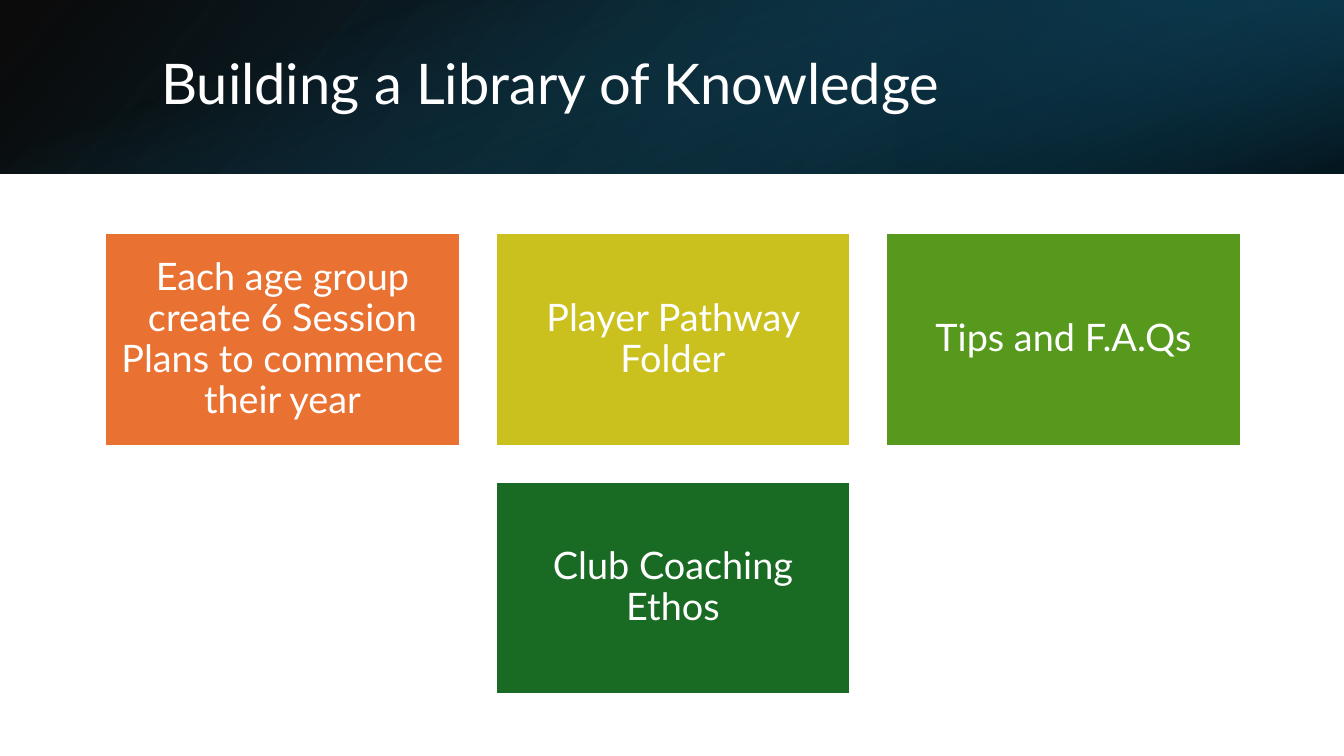
from pptx import Presentation
from pptx.dml.color import RGBColor
from pptx.enum.shapes import MSO_SHAPE
from pptx.enum.text import MSO_ANCHOR, MSO_AUTO_SIZE, PP_ALIGN
from pptx.oxml.ns import qn
from pptx.util import Pt

RECTANGLE = MSO_SHAPE.RECTANGLE
MIDDLE = MSO_ANCHOR.MIDDLE
NO_AUTOFIT = MSO_AUTO_SIZE.NONE
LEFT, CENTER = PP_ALIGN.LEFT, PP_ALIGN.CENTER

SLIDE_WIDTH, SLIDE_HEIGHT = 960, 540
BANNER_HEIGHT = 124
FONT = "Lato"
WHITE = "FFFFFF"
TITLE_ONLY = 5

CARD_ROWS = [
    [
        ("Each age group create 6 Session Plans to commence their year", "E97132"),
        ("Player Pathway Folder", "CBC11E"),
        ("Tips and F.A.Qs", "56991D"),
    ],
    [("Club Coaching Ethos", "196B24")],
]


def color(hex_value):
    return RGBColor.from_string(hex_value)


def add_rectangle(slide, left, top, width, height):
    rectangle = slide.shapes.add_shape(
        RECTANGLE, Pt(left), Pt(top), Pt(width), Pt(height))
    rectangle.shadow.inherit = False
    return rectangle


def write_text(frame, text, size, alignment):
    frame.word_wrap = True
    frame.auto_size = NO_AUTOFIT
    frame.vertical_anchor = MIDDLE
    paragraph = frame.paragraphs[0]
    paragraph.alignment = alignment
    paragraph.line_spacing = 0.9
    run = paragraph.add_run()
    run.text = text
    run.font.name = FONT
    run.font.size = Pt(size)
    run.font.color.rgb = color(WHITE)


def fill_gradient(shape, stops, angle):
    """Apply two (position %, colour, opacity %) stops at a clockwise angle."""
    shape.line.fill.background()
    shape.fill.gradient()
    shape.fill.gradient_angle = 360 - angle
    for stop, (position, hex_value, opacity) in zip(shape.fill.gradient_stops, stops):
        stop.position = position / 100
        stop.color.rgb = color(hex_value)
    for rgb, (_, _, opacity) in zip(shape.element.spPr.iter(qn("a:srgbClr")), stops):
        alpha = rgb.makeelement(qn("a:alpha"), {"val": str(opacity * 1000)})
        rgb.append(alpha)


def flip_horizontally(shape):
    shape.element.spPr.find(qn("a:xfrm")).set("flipH", "1")


def add_banner(slide, left, top, width, height):
    base = add_rectangle(slide, left, top, width, height)
    fill_gradient(base, [(0, "000000", 96), (100, "104862", 100)], 140)
    flip_horizontally(base)

    glow_width = width / 3
    glow = add_rectangle(slide, left + width - glow_width, top, glow_width, height)
    fill_gradient(glow, [(19, "0B3041", 68), (100, "156082", 79)], 320)
    flip_horizontally(glow)
    glow.rotation = 180

    # Turned a quarter, so its width and height swap around the banner's centre
    shift = (width - height) / 2
    shade = add_rectangle(slide, left + shift, top - shift, height, width)
    fill_gradient(shade, [(23, "156082", 0), (99, "000000", 74)], 340)
    shade.rotation = 90

    title = slide.shapes.title
    title.left, title.top = Pt(left + 108), Pt(top + 27)
    title.width, title.height = Pt(790), Pt(69)
    write_text(title.text_frame, "Building a Library of Knowledge", 40, LEFT)
    shade.element.addnext(title.element)


def add_card(slide, left, top, width, height, text, hex_value):
    card = add_rectangle(slide, left, top, width, height)
    card.fill.solid()
    card.fill.fore_color.rgb = color(hex_value)
    card.line.color.rgb = color(WHITE)
    card.line.width = Pt(1.5)
    frame = card.text_frame
    frame.margin_left = frame.margin_right = Pt(8)
    frame.margin_top = frame.margin_bottom = Pt(8)
    write_text(frame, text, 27, CENTER)


def add_card_grid(slide, left, top, width, height):
    """Fill the box with rows of equal cards, each row centred."""
    gap = 25.4
    columns = max(len(row) for row in CARD_ROWS)
    card_width = (width - gap * (columns - 1)) / columns
    card_height = (height - gap * (len(CARD_ROWS) - 1)) / len(CARD_ROWS)
    for row_index, row in enumerate(CARD_ROWS):
        row_width = len(row) * (card_width + gap) - gap
        row_left = left + (width - row_width) / 2
        card_top = top + row_index * (card_height + gap)
        for column, (text, hex_value) in enumerate(row):
            card_left = row_left + column * (card_width + gap)
            add_card(slide, card_left, card_top, card_width, card_height,
                     text, hex_value)


def main():
    presentation = Presentation()
    presentation.slide_width = Pt(SLIDE_WIDTH)
    presentation.slide_height = Pt(SLIDE_HEIGHT)
    slide = presentation.slides.add_slide(presentation.slide_layouts[TITLE_ONLY])
    add_banner(slide, 0, 0, SLIDE_WIDTH, BANNER_HEIGHT)
    add_card_grid(slide, 75, 166.4, 811.4, 329.7)
    presentation.save("out.pptx")


if __name__ == "__main__":
    main()
